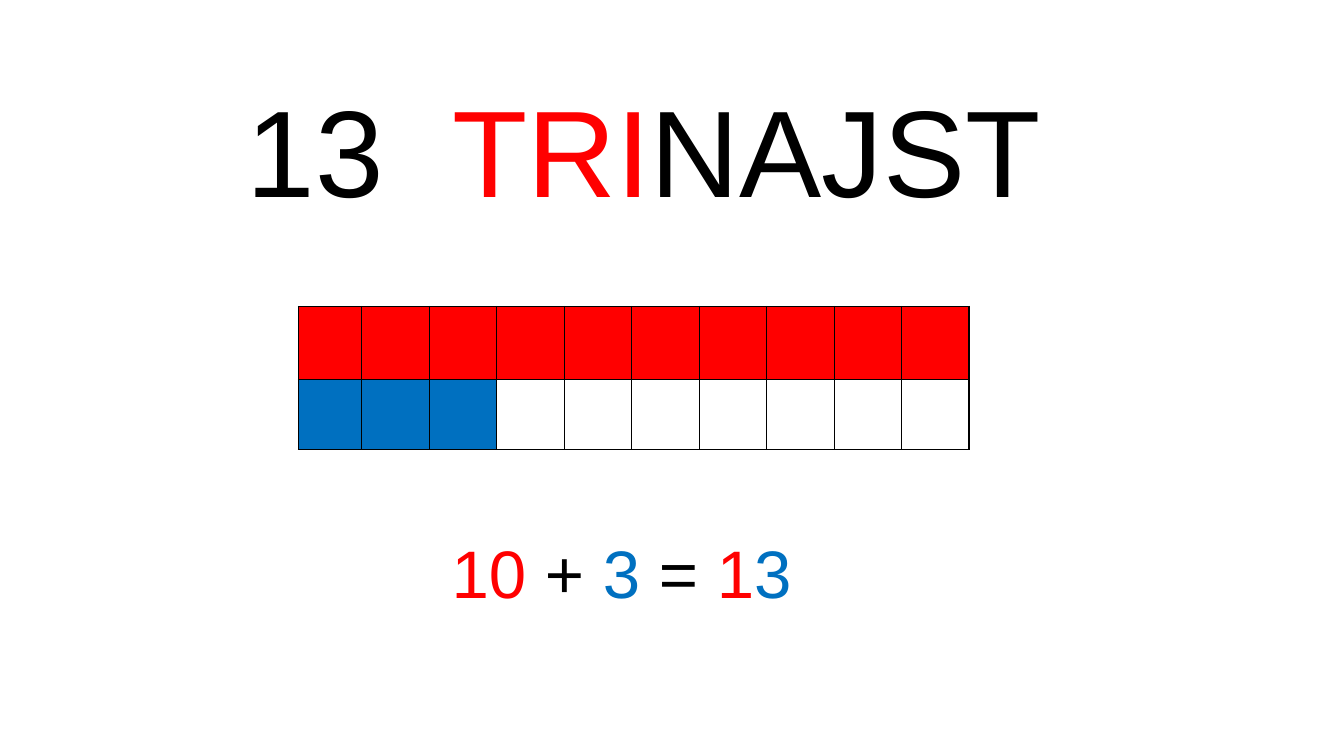
import pptx
import pptx.dml.color
import pptx.enum.text
import pptx.oxml
import pptx.oxml.ns
import pptx.util

Cm = pptx.util.Cm
Pt = pptx.util.Pt
RED = pptx.dml.color.RGBColor(0xFF, 0x00, 0x00)
BLUE = pptx.dml.color.RGBColor(0x00, 0x70, 0xC0)
BLACK = pptx.dml.color.RGBColor(0x00, 0x00, 0x00)
NS = pptx.oxml.ns.nsdecls("a")


class NumberSlide:
    font = "Arial"
    border = Pt(1)

    def __init__(self, prs):
        self.slide = prs.slides.add_slide(prs.slide_layouts[5])

    def fill_text(self, sp, size, runs):
        tf = sp.text_frame
        tf.word_wrap = True
        tf.auto_size = pptx.enum.text.MSO_AUTO_SIZE.NONE
        tf.vertical_anchor = pptx.enum.text.MSO_ANCHOR.TOP
        p = tf.paragraphs[0]
        p.alignment = pptx.enum.text.PP_ALIGN.LEFT
        p.font.name = self.font
        p.font.size = Pt(size)
        for text, color in runs:
            r = p.add_run()
            r.text = text
            r.font.color.rgb = color
        return p

    def title(self, box, size, runs, tab):
        sp = self.slide.shapes.title
        sp.left, sp.top, sp.width, sp.height = box
        p = self.fill_text(sp, size, runs)
        tabs = pptx.oxml.parse_xml(
            f'<a:tabLst {NS}><a:tab pos="{tab}" algn="l"/></a:tabLst>')
        p._p.get_or_add_pPr().insert(0, tabs)

    def text(self, box, size, runs):
        self.fill_text(self.slide.shapes.add_textbox(*box), size, runs)

    def grid(self, left, top, widths, heights, fills):
        frame = self.slide.shapes.add_table(
            len(heights), len(widths), left, top, sum(widths), sum(heights))
        table = frame.table
        table.first_row = False
        table.horz_banding = False
        for column, width in zip(table.columns, widths):
            column.width = width
        for row, height, colors in zip(table.rows, heights, fills):
            row.height = height
            for cell, color in zip(row.cells, colors):
                self.cell(cell, color)

    def cell(self, cell, color):
        if color is None:
            cell.fill.background()
        else:
            cell.fill.solid()
            cell.fill.fore_color.rgb = color
        tcPr = cell._tc.get_or_add_tcPr()
        for i, side in enumerate(("lnL", "lnR", "lnT", "lnB")):
            tcPr.insert(i, pptx.oxml.parse_xml(
                f'<a:{side} {NS} w="{self.border}"><a:solidFill>'
                f'<a:srgbClr val="{BLACK}"/></a:solidFill></a:{side}>'))


def main():
    prs = pptx.Presentation()
    prs.slide_width = Cm(33.87)
    prs.slide_height = Cm(19.05)
    s = NumberSlide(prs)
    s.title((Cm(5.97), Cm(1.75), Cm(24.74), Cm(4.01)), 88,
            [("13\t", BLACK), ("TRI", RED), ("NAJST", BLACK)], Cm(5.18))
    s.grid(Cm(7.52), Cm(7.72), [Cm(1.6)] + [Cm(1.7)] * 9,
           [Cm(1.85), Cm(1.75)],
           [[RED] * 10, [BLUE] * 3 + [None] * 7])
    s.text((Cm(11.13), Cm(13.26), Cm(9.7), Cm(2.31)), 48,
           [("10", RED), (" + ", BLACK), ("3", BLUE), (" = ", BLACK),
            ("1", RED), ("3", BLUE)])
    prs.save("out.pptx")


if __name__ == "__main__":
    main()
